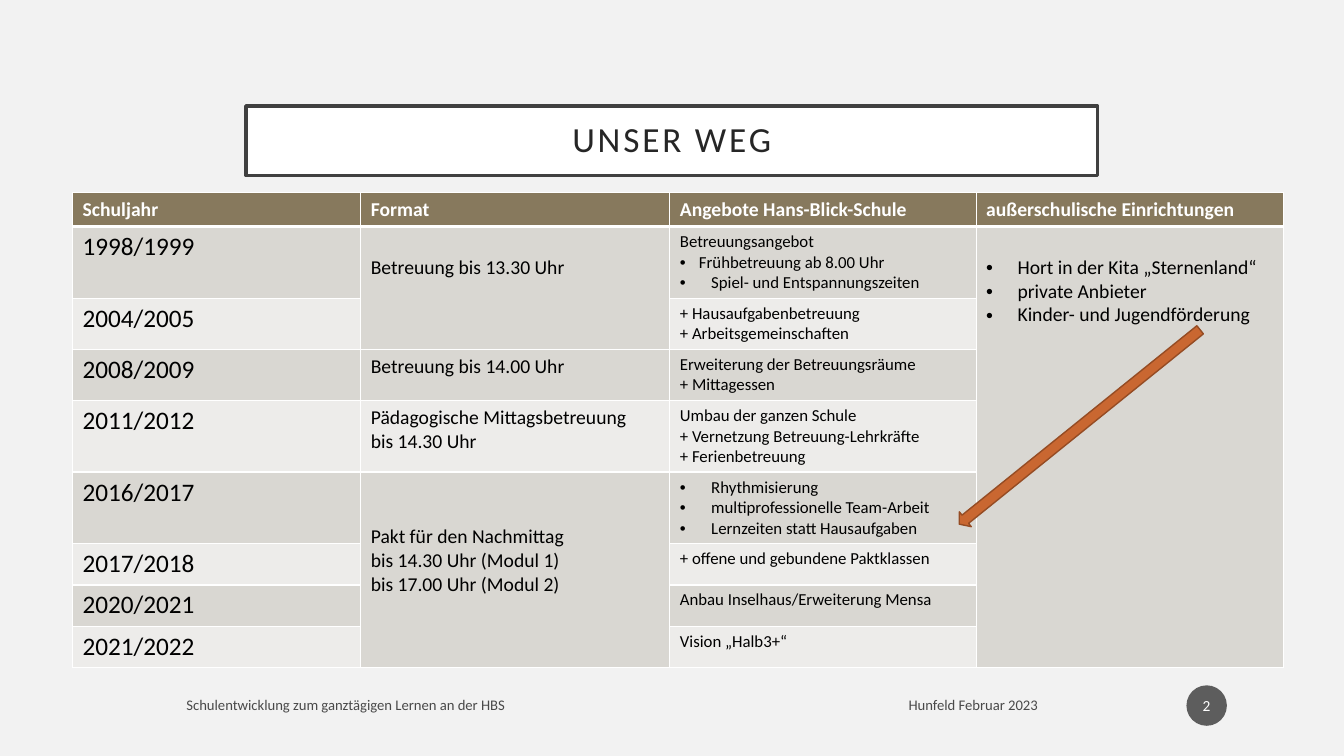
import pptx
import pptx.dml.color
import pptx.enum.shapes
import pptx.enum.text
import pptx.oxml
import pptx.oxml.ns
import pptx.util
from pptx.util import Cm, Pt

FONT = "Calibri"
COLORS = {
    "background": "F2F2F2", "white": "FFFFFF", "black": "000000",
    "title": "262626", "frame": "404040", "header": "87795D",
    "odd": "D9D7D2", "even": "EDECEA", "footer": "494949",
    "badge": "5D5D5D", "arrow": "C96731", "arrow_edge": "954C24",
}
HANGING = 0.79  # cm

TITLE = "UNSER WEG"
FOOTER = "Schulentwicklung zum ganztägigen Lernen an der HBS\tHunfeld Februar 2023"
PAGE = "2"
HEADERS = ["Schuljahr", "Format", "Angebote Hans-Blick-Schule",
           "außerschulische Einrichtungen"]
YEARS = ["1998/1999", "2004/2005", "2008/2009", "2011/2012",
         "2016/2017", "2017/2018", "2020/2021", "2021/2022"]
# first row, last row, lines left free above, paragraphs
FORMATS = [
    (1, 2, 1, ["Betreuung bis 13.30 Uhr"]),
    (3, 3, 0, ["Betreuung bis 14.00 Uhr"]),
    (4, 4, 0, ["Pädagogische Mittagsbetreuung", "bis 14.30 Uhr"]),
    (5, 8, 2, ["Pakt für den Nachmittag", "bis 14.30 Uhr (Modul 1)",
               "bis 17.00 Uhr (Modul 2)"]),
]
# a bulleted paragraph is a pair of text and hanging indent
OFFERS = [
    ["Betreuungsangebot", ("Frühbetreuung ab 8.00 Uhr", 0.48),
     ("Spiel- und Entspannungszeiten", HANGING)],
    ["+ Hausaufgabenbetreuung", "+ Arbeitsgemeinschaften"],
    ["Erweiterung der Betreuungsräume", "+ Mittagessen"],
    ["Umbau der ganzen Schule", "+ Vernetzung Betreuung-Lehrkräfte",
     "+ Ferienbetreuung"],
    [("Rhythmisierung", HANGING), ("multiprofessionelle Team-Arbeit", HANGING),
     ("Lernzeiten statt Hausaufgaben", HANGING)],
    ["+ offene und gebundene Paktklassen"],
    ["Anbau Inselhaus/Erweiterung Mensa"],
    ["Vision „Halb3+“"],
]
PARTNERS = [("Hort in der Kita „Sternenland“", HANGING),
            ("private Anbieter", HANGING),
            ("Kinder- und Jugendförderung", HANGING)]

COLUMN_WIDTHS = [7.26, 7.79, 7.72, 7.74]
ROW_HEIGHTS = [0.86, 1.8, 1.29, 1.29, 1.8, 1.8, 1.04, 1.04, 1.04]
CELL_TOP, FREE_LINE = 0.13, 0.6


def rgb(name):
    return pptx.dml.color.RGBColor.from_string(COLORS[name])


def xml(tag, attributes="", inner=""):
    ns = pptx.oxml.ns.nsdecls("a")
    return pptx.oxml.parse_xml(f"<a:{tag} {ns} {attributes}>{inner}</a:{tag}>")


def paint(shape, fill, line=None, width=1):
    shape.fill.solid()
    shape.fill.fore_color.rgb = rgb(fill)
    if line:
        shape.line.color.rgb = rgb(line)
        shape.line.width = Pt(width)
    else:
        shape.line.fill.background()


def write(tf, paragraphs, size, color, bold=False, align=None):
    for i, item in enumerate(paragraphs):
        text, indent = item if isinstance(item, tuple) else (item, 0)
        p = tf.paragraphs[0] if i == 0 else tf.add_paragraph()
        p.text = text
        p.alignment = align
        for r in p.runs:
            r.font.size, r.font.name, r.font.bold = Pt(size), FONT, bold
            r.font.color.rgb = rgb(color)
        if indent:
            pPr = p._p.get_or_add_pPr()
            pPr.set("marL", str(Cm(indent)))
            pPr.set("indent", str(-Cm(indent)))
            pPr.append(xml("buFont", 'typeface="Arial"'))
            pPr.append(xml("buChar", 'char="•"'))


def style_cell(cell, row):
    """Set white borders, thick below the header, and the banded fill."""
    tcPr = cell._tc.get_or_add_tcPr()
    for side in "LRTB":
        thick = (row, side) in [(0, "B"), (1, "T")]
        width = Pt(3 if thick else 1)
        tcPr.append(xml(f"ln{side}", f'w="{width}"',
                        f'<a:solidFill><a:srgbClr val="{COLORS["white"]}"/></a:solidFill>'))
    cell.fill.solid()
    cell.fill.fore_color.rgb = rgb("header" if row == 0 else "odd" if row % 2 else "even")


def fill_block(table, column, first, last, free_lines, paragraphs):
    cell = table.cell(first, column)
    if last > first:
        cell.merge(table.cell(last, column))
    cell.margin_top = Cm(CELL_TOP + free_lines * FREE_LINE)
    write(cell.text_frame, paragraphs, 14, "black")


def add_title(s):
    title = s.shapes.title
    title.left, title.top, title.width, title.height = Cm(6.2), Cm(2.67), Cm(21.46), Cm(1.75)
    paint(title, "white", "frame", 2.5)
    tf = title.text_frame
    tf.auto_size = pptx.enum.text.MSO_AUTO_SIZE.NONE
    tf.vertical_anchor = pptx.enum.text.MSO_ANCHOR.MIDDLE
    tf.margin_left = tf.margin_right = tf.margin_top = tf.margin_bottom = Cm(0.5)
    write(tf, [TITLE], 25.2, "title", align=pptx.enum.text.PP_ALIGN.CENTER)
    p = tf.paragraphs[0]
    p.line_spacing = 0.9
    p.runs[0]._r.get_or_add_rPr().set("spc", "200")


def add_timeline(s):
    table = s.shapes.add_table(len(ROW_HEIGHTS), len(COLUMN_WIDTHS), Cm(1.83), Cm(4.85),
                               Cm(sum(COLUMN_WIDTHS)), Cm(sum(ROW_HEIGHTS))).table
    for column, width in zip(table.columns, COLUMN_WIDTHS):
        column.width = Cm(width)
    for i, height in enumerate(ROW_HEIGHTS):
        table.rows[i].height = Cm(height)
        for cell in table.rows[i].cells:
            style_cell(cell, i)
    for j, header in enumerate(HEADERS):
        write(table.cell(0, j).text_frame, [header], 14, "white", bold=True)
    for i, (year, offer) in enumerate(zip(YEARS, OFFERS), 1):
        write(table.cell(i, 0).text_frame, [year], 18, "black")
        write(table.cell(i, 2).text_frame, offer, 12, "black")
    for block in FORMATS:
        fill_block(table, 1, *block)
    fill_block(table, 3, 1, len(YEARS), 1, PARTNERS)


def add_footer(s):
    tf = s.shapes.add_textbox(Cm(4.45), Cm(17.32), Cm(24.74), Cm(0.89)).text_frame
    tf.word_wrap = True
    tf.vertical_anchor = pptx.enum.text.MSO_ANCHOR.MIDDLE
    write(tf, [FOOTER], 10.5, "footer")
    tab = f'<a:tab pos="{Cm(18.2)}" algn="l"/>'
    tf.paragraphs[0]._p.get_or_add_pPr().append(xml("tabLst", inner=tab))


def add_page_badge(s):
    badge = s.shapes.add_shape(pptx.enum.shapes.MSO_SHAPE.OVAL,
                               Cm(29.9), Cm(17.27), Cm(1.02), Cm(1.02))
    badge.shadow.inherit = False
    paint(badge, "badge")
    tf = badge.text_frame
    tf.margin_left = tf.margin_right = Cm(0.05)
    tf.vertical_anchor = pptx.enum.text.MSO_ANCHOR.MIDDLE
    write(tf, [PAGE], 11, "white", align=pptx.enum.text.PP_ALIGN.CENTER)


def add_arrow(s):
    arrow = s.shapes.add_shape(pptx.enum.shapes.MSO_SHAPE.DOWN_ARROW,
                               Cm(26.97), Cm(6.86), Cm(0.48), Cm(7.8))
    arrow.shadow.inherit = False
    arrow.rotation = 51.1
    arrow.adjustments[0], arrow.adjustments[1] = 0.55, 0.41
    paint(arrow, "arrow", "arrow_edge")


def main():
    prs = pptx.Presentation()
    prs.slide_width, prs.slide_height = Cm(33.87), Cm(19.05)
    s = prs.slides.add_slide(prs.slide_layouts[5])
    s.background.fill.solid()
    s.background.fill.fore_color.rgb = rgb("background")
    add_title(s)
    add_timeline(s)
    add_footer(s)
    add_page_badge(s)
    add_arrow(s)
    prs.save("out.pptx")


if __name__ == "__main__":
    main()
